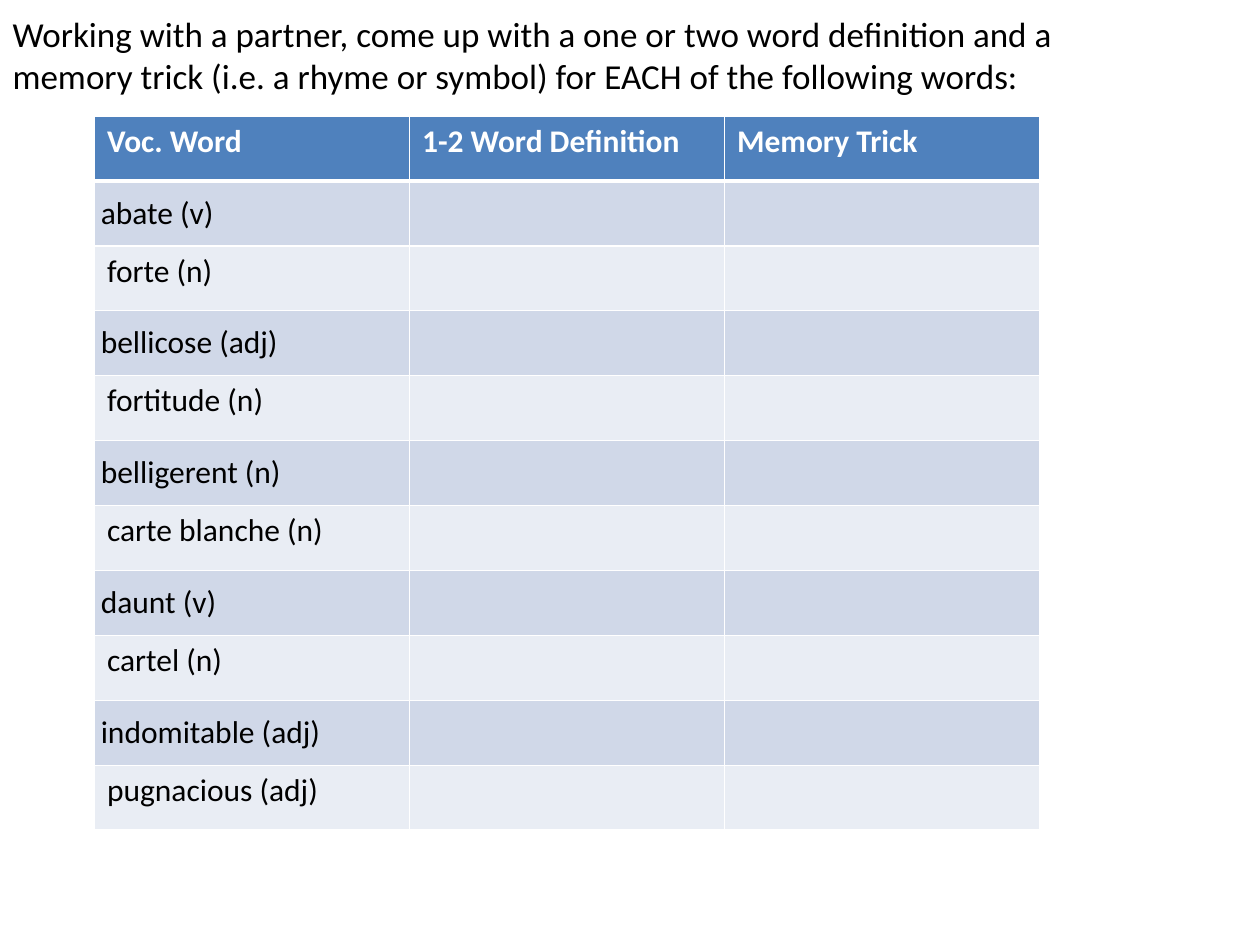
"""Build a vocabulary slide with a table for definitions and memory tricks."""
from lxml import etree
from pptx import Presentation, util as u
from pptx.dml.color import RGBColor
from pptx.enum import text
from pptx.oxml import ns


def color(fmt, value):
    fmt.rgb = RGBColor.from_string(value)


def border(cell, side, width):
    ln = etree.SubElement(cell._tc.get_or_add_tcPr(), ns.qn(f"a:ln{side}"), w=str(u.Pt(width)))
    fill = etree.SubElement(ln, ns.qn("a:solidFill"))
    etree.SubElement(fill, ns.qn("a:srgbClr"), val="FFFFFF")


HEADERS = ["Voc. Word", "1-2 Word Definition", "Memory Trick"]
WORDS = ["abate (v)", "forte (n)", "bellicose (adj)", "fortitude (n)", "belligerent (n)",
         "carte blanche (n)", "daunt (v)", "cartel (n)", "indomitable (adj)", "pugnacious (adj)"]
BANDS = ["E9EDF4", "D0D8E8"]
TIGHT = {"vertical_anchor": text.MSO_ANCHOR.MIDDLE, "margin_left": u.Inches(0.05),
         "margin_right": u.Inches(0.05), "margin_top": 0, "margin_bottom": 0}

prs = Presentation()
prs.slide_width, prs.slide_height = u.Inches(10), u.Inches(7.5)
W, H = prs.slide_width, prs.slide_height
s = prs.slides.add_slide(prs.slide_layouts[5])

title = s.shapes.title
place = {"left": 0, "top": u.Inches(0.03), "width": int(W * 0.9), "height": u.Inches(0.8)}
for name, value in place.items():
    setattr(title, name, value)
tf = title.text_frame
tf.text = ("Working with a partner, come up with a one or two word definition and a "
           "memory trick (i.e. a rhyme or symbol) for EACH of the following words:")
frame = {"word_wrap": True, "auto_size": text.MSO_AUTO_SIZE.NONE,
         "vertical_anchor": text.MSO_ANCHOR.MIDDLE}
for name, value in frame.items():
    setattr(tf, name, value)
p = tf.paragraphs[0]
p.alignment = text.PP_ALIGN.LEFT
for name, value in {"name": "Calibri", "size": u.Pt(20)}.items():
    setattr(p.runs[0].font, name, value)
color(p.runs[0].font.color, "000000")

rows = [HEADERS] + [[word, "", ""] for word in WORDS]
table = s.shapes.add_table(len(rows), len(HEADERS), int(W * 0.075), u.Inches(0.92),
                           int(W * 0.75), int(H * 0.756)).table
for i, row in enumerate(rows):
    for j, label in enumerate(row):
        cell = table.cell(i, j)
        for side in "LRTB":
            header_rule = (i, side) in [(0, "B"), (1, "T")]
            border(cell, side, 3 if header_rule else 1)
        cell.fill.solid()
        color(cell.fill.fore_color, BANDS[i % 2] if i else "4F81BD")
        if i % 2 and j == 0:
            for name, value in TIGHT.items():
                setattr(cell, name, value)
        p = cell.text_frame.paragraphs[0]
        p.font.size = u.Pt(18)
        if label:
            r = p.add_run()
            r.text = label
            for name, value in {"name": "Calibri", "size": u.Pt(18), "bold": i == 0}.items():
                setattr(r.font, name, value)
            color(r.font.color, "000000" if i else "FFFFFF")

prs.save("out.pptx")
